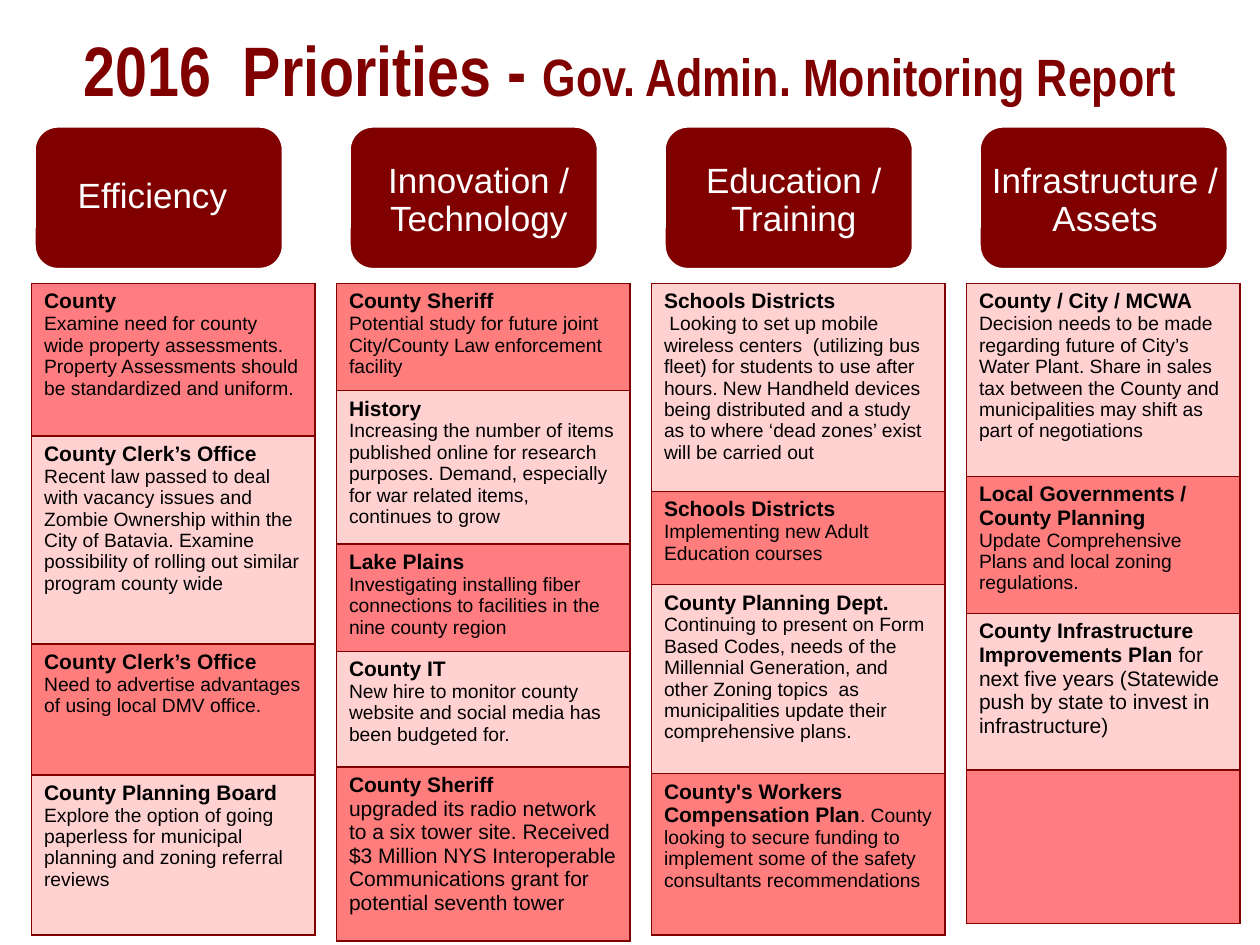
from dataclasses import dataclass

from lxml import etree
from pptx import Presentation
from pptx.dml import color
from pptx.enum import shapes, text
from pptx.oxml import ns
from pptx.util import Inches, Pt

MAROON, WHITE, BLACK = "800000", "FFFFFF", "000000"
PINK, RED, CORAL = "FFD1D1", "FF7D7D", "FF7C80"
COLUMN_PITCH = 2.5
TABLE_TOP = 2.25


@dataclass
class Item:
    height: float
    fill: str
    heading: str = ""
    body: str = ""
    body_size: int = 11
    inline: bool = False


@dataclass
class Column:
    label: str
    label_offset: float
    label_top: float
    left: float
    width: float
    items: list[Item]


COLUMNS = [
    Column("Efficiency", 0, 1.05, 0.25, 2.25, [
        Item(1.21, CORAL, "County",
             "Examine need for county wide property assessments. "
             "Property Assessments should be standardized and uniform."),
        Item(1.65, PINK, "County Clerk’s Office",
             "Recent law passed to deal with vacancy issues and Zombie Ownership within the "
             "City of Batavia. Examine possibility of rolling out similar program county wide"),
        Item(1.04, RED, "County Clerk’s Office",
             "Need to advertise advantages of using local DMV office."),
        Item(1.27, PINK, "County Planning Board",
             "Explore the option of going paperless for municipal planning "
             "and zoning referral reviews"),
    ]),
    Column("Innovation / Technology", 0.09, 1.08, 2.67, 2.33, [
        Item(0.83, RED, "County Sheriff",
             "Potential study for future joint City/County Law enforcement facility"),
        Item(1.18, PINK, "History",
             "Increasing the number of items published online for research purposes. "
             "Demand, especially for war related items, continues to grow"),
        Item(0.83, CORAL, "Lake Plains",
             "Investigating installing fiber connections to facilities in the nine county region"),
        Item(0.92, PINK, "County IT",
             "New hire to monitor county website and social media has been budgeted for."),
        Item(1.38, RED, "County Sheriff",
             "upgraded its radio network to a six tower site. Received $3 Million NYS "
             "Interoperable Communications grant for potential seventh tower", 12),
    ]),
    Column("Education / Training", 0.09, 1.08, 5.17, 2.33, [
        Item(1.65, PINK, "Schools Districts",
             " Looking to set up mobile wireless centers  (utilizing bus fleet) for students to "
             "use after hours. New Handheld devices being distributed and a study as to where "
             "‘dead zones’ exist will be carried out"),
        Item(0.74, RED, "Schools Districts", "Implementing new Adult Education courses"),
        Item(1.5, PINK, "County Planning Dept.",
             "Continuing to present on Form Based Codes, needs of the Millennial Generation, and "
             "other Zoning topics  as municipalities update their comprehensive plans."),
        Item(1.28, RED, "County's Workers Compensation Plan",
             ". County looking to secure funding to implement some of the safety "
             "consultants recommendations", inline=True),
    ]),
    Column("Infrastructure / Assets", 0.06, 1.08, 7.67, 2.17, [
        Item(1.53, PINK, "County / City / MCWA",
             "Decision needs to be made regarding future of City’s Water Plant. Share in sales "
             "tax between the County and municipalities may shift as part of negotiations"),
        Item(1.09, RED, "Local Governments /\nCounty Planning",
             "Update Comprehensive Plans and local zoning regulations."),
        Item(1.24, PINK, "County Infrastructure Improvements Plan ",
             "for next five years (Statewide push by state to invest in infrastructure)",
             12, True),
        Item(1.22, CORAL),
    ]),
]


def rgb(value: str) -> color.RGBColor:
    return color.RGBColor.from_string(value)


def format_font(font, size: float, fill: str, bold: bool = False, name: str = "Arial") -> None:
    font.name = name
    font.size = Pt(size)
    font.bold = bold
    font.color.rgb = rgb(fill)


def add_title(slide) -> None:
    title = slide.shapes.title
    title.left, title.top = Inches(0), Inches(0.17)
    title.width, title.height = Inches(10), Inches(0.75)
    frame = title.text_frame
    frame.text = "2016  Priorities - "
    frame.vertical_anchor = text.MSO_ANCHOR.MIDDLE
    paragraph = frame.paragraphs[0]
    paragraph.alignment = text.PP_ALIGN.CENTER
    paragraph.add_run().text = "Gov. Admin. Monitoring Report"
    for run, size in zip(paragraph.runs, (40, 30)):
        format_font(run.font, size, MAROON, True, "Arial Narrow")


def add_header(slide, column: Column, left: float) -> None:
    card = slide.shapes.add_shape(
        shapes.MSO_SHAPE.ROUNDED_RECTANGLE,
        Inches(left), Inches(1), Inches(1.98), Inches(1.14))
    card.shadow.inherit = False
    card.fill.solid()
    card.fill.fore_color.rgb = rgb(MAROON)
    card.line.color.rgb = rgb(WHITE)
    card.line.width = Pt(2)

    label = slide.shapes.add_textbox(
        Inches(left + column.label_offset), Inches(column.label_top), Inches(1.88), Inches(1.03))
    frame = label.text_frame
    frame.text = column.label
    frame.word_wrap = True
    frame.vertical_anchor = text.MSO_ANCHOR.MIDDLE
    frame.margin_left = frame.margin_right = Inches(0.04)
    frame.margin_top = frame.margin_bottom = Inches(0.04)
    paragraph = frame.paragraphs[0]
    paragraph.alignment = text.PP_ALIGN.CENTER
    paragraph.line_spacing = 0.9
    format_font(paragraph.runs[0].font, 20, WHITE)


def add_borders(cell) -> None:
    properties = cell._tc.get_or_add_tcPr()
    for side in ("lnL", "lnR", "lnT", "lnB"):
        line = etree.SubElement(properties, ns.qn(f"a:{side}"), w=str(Pt(1)))
        fill = etree.SubElement(line, ns.qn("a:solidFill"))
        etree.SubElement(fill, ns.qn("a:srgbClr"), val=MAROON)


def fill_cell(cell, item: Item) -> None:
    add_borders(cell)
    cell.fill.solid()
    cell.fill.fore_color.rgb = rgb(item.fill)
    if not item.heading:
        return
    frame = cell.text_frame
    frame.text = item.heading
    for paragraph in frame.paragraphs:
        format_font(paragraph.runs[0].font, 12, BLACK, True)
    paragraph = frame.paragraphs[-1] if item.inline else frame.add_paragraph()
    run = paragraph.add_run()
    run.text = item.body
    format_font(run.font, item.body_size, BLACK)


def add_items(slide, column: Column) -> None:
    height = sum(item.height for item in column.items)
    table = slide.shapes.add_table(
        len(column.items), 1, Inches(column.left), Inches(TABLE_TOP),
        Inches(column.width), Inches(height)).table
    table.first_row = False
    table.horz_banding = False
    for row, item in zip(table.rows, column.items):
        row.height = Inches(item.height)
        fill_cell(row.cells[0], item)


def main() -> None:
    presentation = Presentation()
    presentation.slide_width = Inches(10)
    presentation.slide_height = Inches(7.5)
    slide = presentation.slides.add_slide(presentation.slide_layouts.get_by_name("Title Only"))
    add_title(slide)
    for index, column in enumerate(COLUMNS):
        add_header(slide, column, 0.27 + index * COLUMN_PITCH)
        add_items(slide, column)
    presentation.save("out.pptx")


if __name__ == "__main__":
    main()
